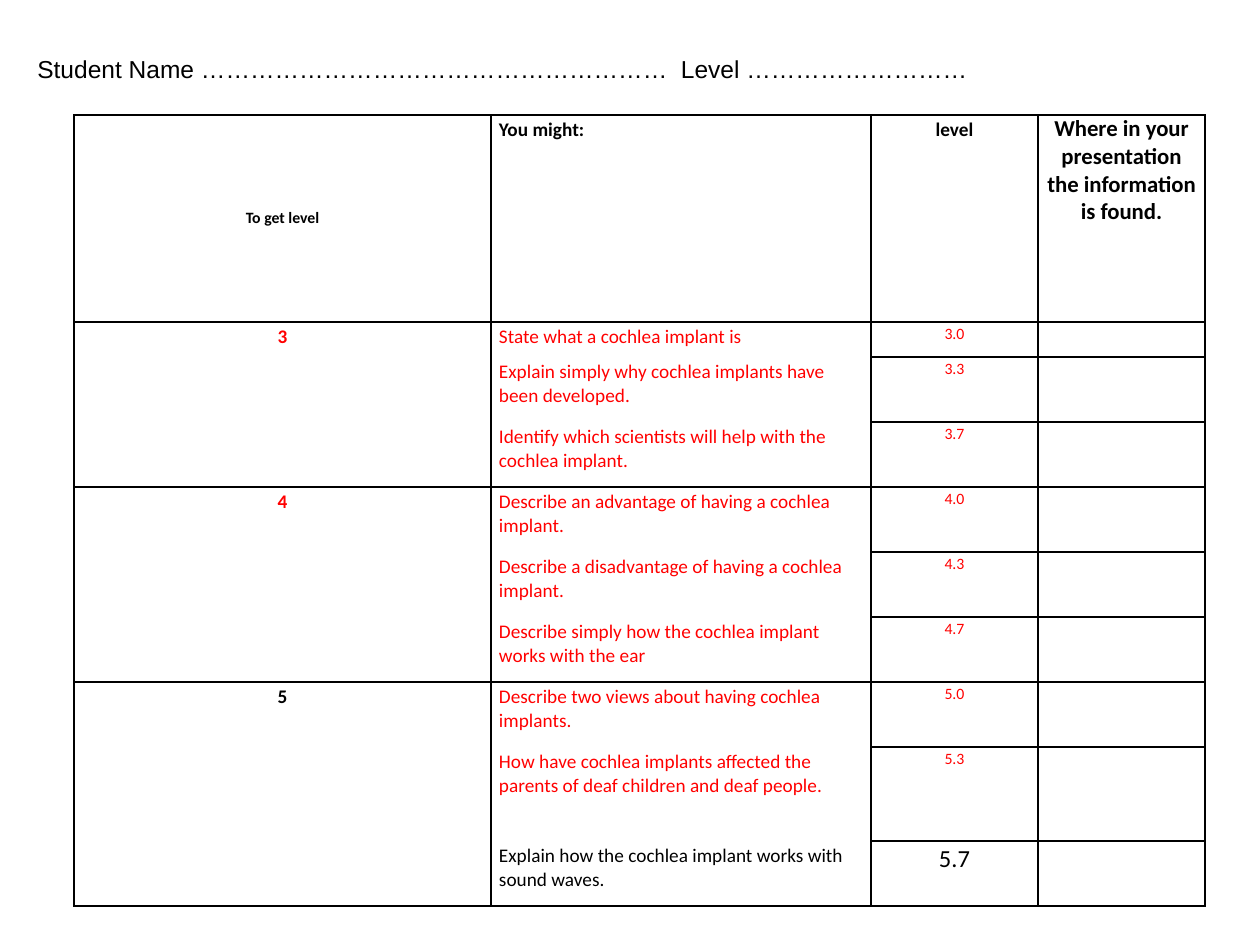
from dataclasses import dataclass

from lxml import etree
from pptx import Presentation, util as u
from pptx.dml.color import RGBColor
from pptx.enum import text
from pptx.oxml import ns


@dataclass(frozen=True)
class Theme:
    black: str = "000000"
    red: str = "FF0000"
    heading_font: str = "Arial"
    table_font: str = "Calibri"
    small: int = 9
    body: int = 11
    large: int = 13
    big: int = 14
    border: int = 1


@dataclass(frozen=True)
class Label:
    """Text of one cell and how it looks."""
    words: str
    size: int
    color: str = "000000"
    bold: bool = False
    centered: bool = True
    anchor: text.MSO_ANCHOR = text.MSO_ANCHOR.TOP
    inset: int = 3


@dataclass(frozen=True)
class Criterion:
    task: str
    level: str
    color: str
    level_size: int


@dataclass(frozen=True)
class LevelGroup:
    name: str
    color: str
    criteria: tuple[Criterion, ...]


THEME = Theme()
EMU_PER_PX = 914400 / 126
SLIDE_SIZE = (1260, 945)
NAME_BOX = (25, 37, 1260, 63)
TABLE_ORIGIN = (74, 115)
COLUMN_WIDTHS = (417, 380, 167, 167)
ROW_HEIGHTS = (207, 35, 65, 65, 65, 65, 65, 65, 94, 65)
SIDE_INSET = 8
ALL_SIDES = "LRTB"

HEADERS = (
    Label("To get level", THEME.small, bold=True, anchor=text.MSO_ANCHOR.MIDDLE),
    Label("You might:", THEME.body, bold=True, centered=False),
    Label("level", THEME.body, bold=True),
    Label("Where in your presentation the information is found.", THEME.large,
          bold=True, inset=0),
)


def red_criterion(task: str, level: str) -> Criterion:
    return Criterion(task, level, THEME.red, THEME.small)


GROUPS = (
    LevelGroup("3", THEME.red, (
        red_criterion("State what a cochlea implant is", "3.0"),
        red_criterion("Explain simply why cochlea implants have been developed.", "3.3"),
        red_criterion("Identify which scientists will help with the cochlea implant.", "3.7"),
    )),
    LevelGroup("4", THEME.red, (
        red_criterion("Describe an advantage of having a cochlea implant.", "4.0"),
        red_criterion("Describe a disadvantage of having a cochlea implant.", "4.3"),
        red_criterion("Describe simply how the cochlea implant works with the ear", "4.7"),
    )),
    LevelGroup("5", THEME.black, (
        red_criterion("Describe two views about having cochlea implants.", "5.0"),
        red_criterion("How have cochlea implants affected the parents of deaf children "
                      "and deaf people.", "5.3"),
        Criterion("Explain how the cochlea implant works with sound waves.", "5.7",
                  THEME.black, THEME.big),
    )),
)


def px(length: int) -> u.Emu:
    return u.Emu(round(length * EMU_PER_PX))


def apply_format(target, values: dict) -> None:
    for name, value in values.items():
        setattr(target, name, value)


def add_run(paragraph, words: str, font_name: str, size: int, color: str,
            bold: bool = False) -> None:
    run = paragraph.add_run()
    run.text = words
    apply_format(run.font, {"name": font_name, "size": u.Pt(size), "bold": bold})
    run.font.color.rgb = RGBColor.from_string(color)


def set_borders(cell, visible_sides: str) -> None:
    """Rule the given sides and leave the others without a line."""
    properties = cell._tc.get_or_add_tcPr()
    for side in ALL_SIDES:
        line = etree.SubElement(properties, ns.qn(f"a:ln{side}"),
                                w=str(u.Pt(THEME.border)))
        if side in visible_sides:
            fill = etree.SubElement(line, ns.qn("a:solidFill"))
            etree.SubElement(fill, ns.qn("a:srgbClr"), val=THEME.black)
        else:
            etree.SubElement(line, ns.qn("a:noFill"))


def prepare_cell(cell, visible_sides: str) -> None:
    """Set the borders and fill, and keep an empty cell from stretching its row."""
    set_borders(cell, visible_sides)
    cell.fill.background()
    end_properties = cell.text_frame.paragraphs[0]._p.get_or_add_endParaRPr()
    end_properties.set("sz", str(THEME.small * 100))


def write_label(cell, label: Label) -> None:
    apply_format(cell, {
        "margin_left": px(SIDE_INSET), "margin_right": px(SIDE_INSET),
        "margin_top": px(label.inset), "margin_bottom": px(label.inset),
        "vertical_anchor": label.anchor,
    })
    paragraph = cell.text_frame.paragraphs[0]
    paragraph.alignment = text.PP_ALIGN.CENTER if label.centered else text.PP_ALIGN.LEFT
    add_run(paragraph, label.words, THEME.table_font, label.size, label.color, label.bold)


def write_group(table, first_row: int, group: LevelGroup) -> None:
    last_row = first_row + len(group.criteria) - 1
    for row, criterion in enumerate(group.criteria, first_row):
        task_sides = "LR" + "T" * (row == first_row) + "B" * (row == last_row)
        for column, sides in enumerate((ALL_SIDES, task_sides, ALL_SIDES, ALL_SIDES)):
            prepare_cell(table.cell(row, column), sides)
        write_label(table.cell(row, 1),
                    Label(criterion.task, THEME.body, criterion.color, centered=False))
        write_label(table.cell(row, 2),
                    Label(criterion.level, criterion.level_size, criterion.color))
    name_cell = table.cell(first_row, 0)
    name_cell.merge(table.cell(last_row, 0))
    write_label(name_cell, Label(group.name, THEME.body, group.color, bold=True))


def add_level_table(slide) -> None:
    frame = slide.shapes.add_table(
        len(ROW_HEIGHTS), len(COLUMN_WIDTHS), *map(px, TABLE_ORIGIN),
        px(sum(COLUMN_WIDTHS)), px(sum(ROW_HEIGHTS)))
    table = frame.table
    apply_format(table, {"first_row": False, "horz_banding": False})
    for column, width in zip(table.columns, COLUMN_WIDTHS):
        column.width = px(width)
    for row, height in zip(table.rows, ROW_HEIGHTS):
        row.height = px(height)
    for column, label in enumerate(HEADERS):
        prepare_cell(table.cell(0, column), ALL_SIDES)
        write_label(table.cell(0, column), label)
    first_row = 1
    for group in GROUPS:
        write_group(table, first_row, group)
        first_row += len(group.criteria)


def add_name_line(slide) -> None:
    frame = slide.shapes.add_textbox(*map(px, NAME_BOX)).text_frame
    apply_format(frame, {"word_wrap": True, "vertical_anchor": text.MSO_ANCHOR.MIDDLE})
    add_run(frame.paragraphs[0],
            "Student Name …………………………………………………  Level ………………………",
            THEME.heading_font, THEME.big, THEME.black)


def main() -> None:
    presentation = Presentation()
    width, height = map(px, SLIDE_SIZE)
    apply_format(presentation, {"slide_width": width, "slide_height": height})
    slide = presentation.slides.add_slide(presentation.slide_layouts[6])
    add_level_table(slide)
    add_name_line(slide)
    presentation.save("out.pptx")


if __name__ == "__main__":
    main()
